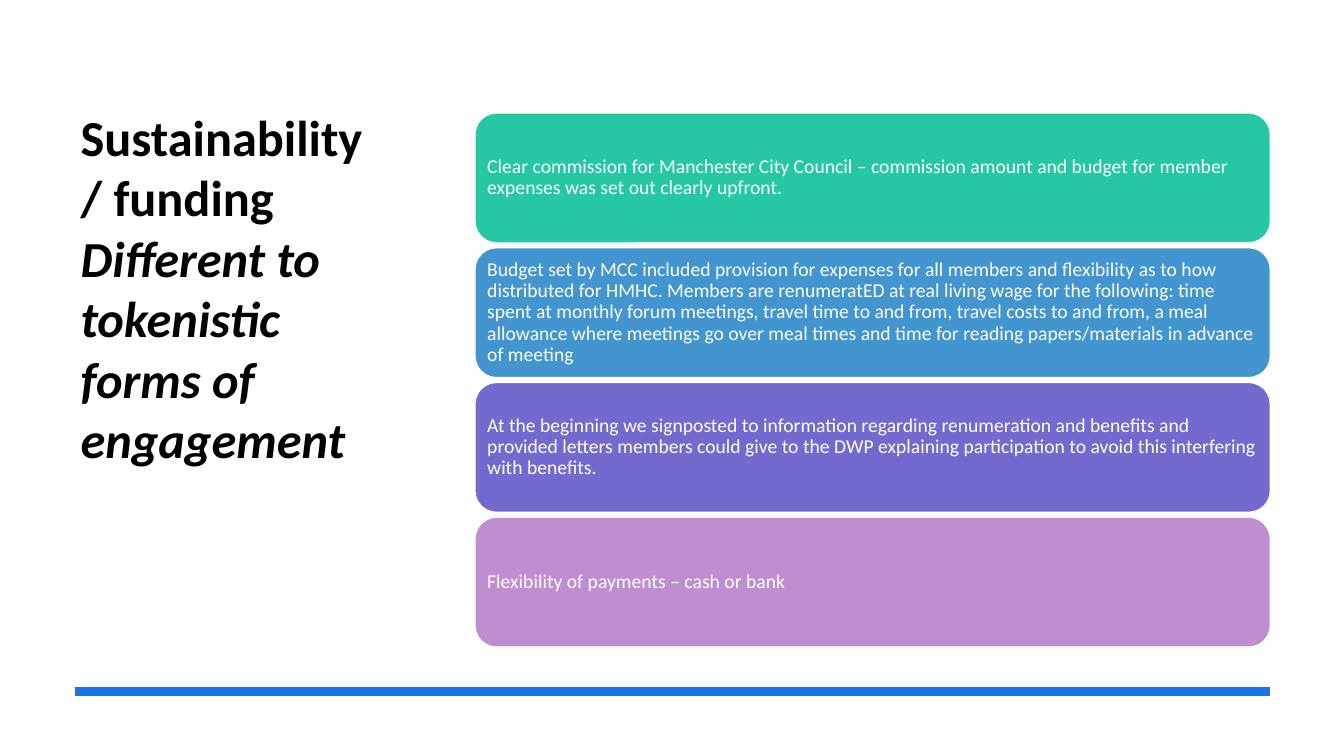
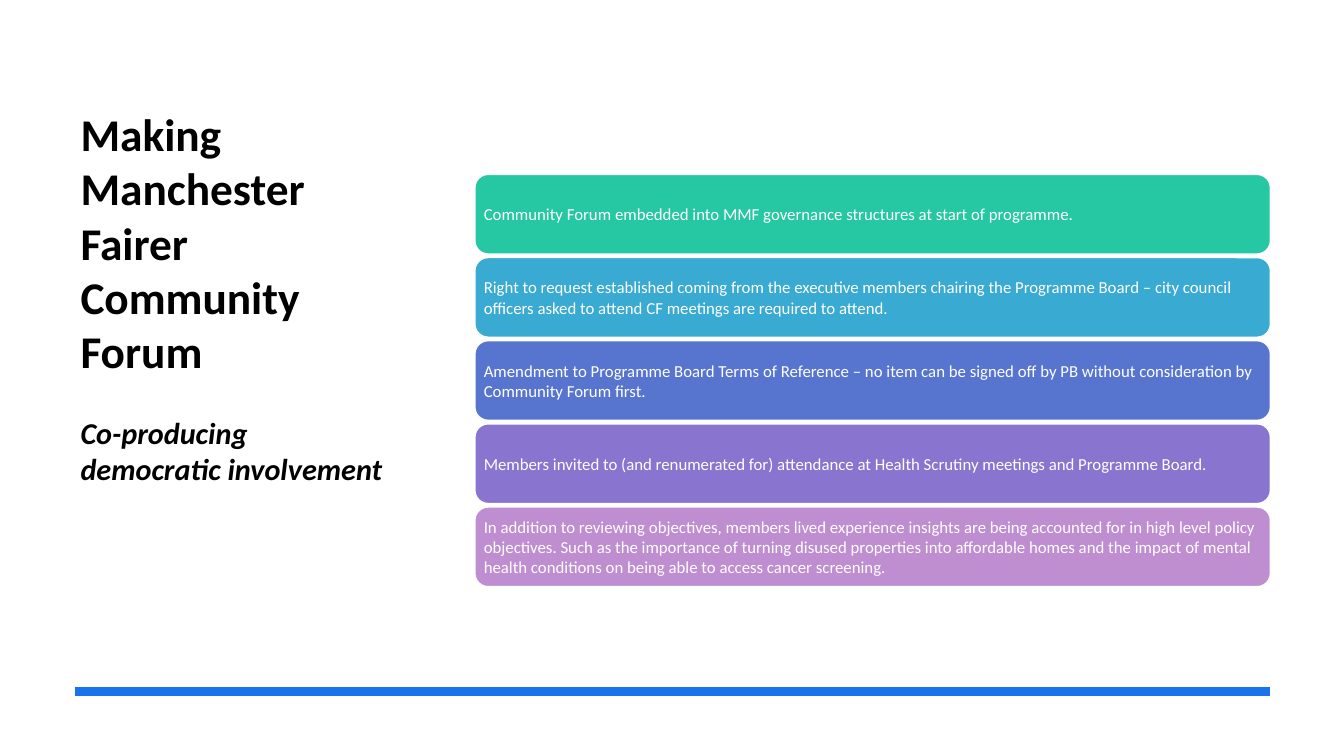
from lxml import etree
from pptx import Presentation
from pptx.dml.color import RGBColor
from pptx.enum.shapes import MSO_CONNECTOR, MSO_SHAPE
from pptx.enum.text import MSO_ANCHOR, PP_ALIGN
from pptx.oxml.ns import qn
from pptx.util import Inches, Pt

FONT = "Calibri"
BLACK = RGBColor(0x00, 0x00, 0x00)
WHITE = RGBColor(0xFF, 0xFF, 0xFF)
RULE_BLUE = RGBColor(0x19, 0x73, 0xEB)
GREEN = RGBColor(0x25, 0xC8, 0xA2)
CYAN = RGBColor(0x39, 0xAA, 0xD1)
SKY = RGBColor(0x43, 0x95, 0xD0)
INDIGO = RGBColor(0x57, 0x75, 0xCF)
VIOLET = RGBColor(0x72, 0x6A, 0xCF)
PURPLE = RGBColor(0x89, 0x74, 0xCF)
LILAC = RGBColor(0xBF, 0x8E, 0xD1)

CARD_LEFT, CARD_WIDTH = 4.71, 7.89

# Content: title and subtitle, then the stack of coloured cards
SLIDES = [
    {
        "title": "Sustainability / funding", "title_size": 36,
        "subtitle": "Different to tokenistic forms of engagement",
        "subtitle_size": 36, "subtitle_gap": 0,
        "first_top": 1.12, "last_top": 5.13, "height": 1.29,
        "inset": 0.06, "size": 14, "spacing": 0.9,
        "cards": [
            (GREEN, "Clear commission for Manchester City Council – commission "
                    "amount and budget for member expenses was set out clearly "
                    "upfront."),
            (SKY, "Budget set by MCC included provision for expenses for all "
                  "members and flexibility as to how distributed for HMHC. "
                  "Members are renumeratED at real living wage for the "
                  "following: time spent at monthly forum meetings, travel time "
                  "to and from, travel costs to and from, a meal allowance where "
                  "meetings go over meal times and time for reading "
                  "papers/materials in advance of meeting"),
            (VIOLET, "At the beginning we signposted to information regarding "
                     "renumeration and benefits and provided letters members "
                     "could give to the DWP explaining participation to avoid "
                     "this interfering with benefits."),
            (LILAC, "Flexibility of payments – cash or bank"),
        ],
    },
    {
        "title": "Making Manchester Fairer Community Forum", "title_size": 32.4,
        "subtitle": "Co-producing democratic involvement",
        "subtitle_size": 21.6, "subtitle_gap": 26,
        "first_top": 1.73, "last_top": 5.03, "height": 0.79,
        "inset": 0.05, "size": 12, "spacing": 1.0,
        "cards": [
            (GREEN, "Community Forum embedded into MMF governance structures at "
                    "start of programme."),
            (CYAN, "Right to request established coming from the executive "
                   "members chairing the Programme Board – city council officers "
                   "asked to attend CF meetings are required to attend."),
            (INDIGO, "Amendment to Programme Board Terms of Reference – no item "
                     "can be signed off by PB without consideration by Community "
                     "Forum first."),
            (PURPLE, "Members invited to (and renumerated for) attendance at "
                     "Health Scrutiny meetings and Programme Board."),
            (LILAC, "In addition to reviewing objectives, members lived "
                    "experience insights are being accounted for in high level "
                    "policy objectives. Such as the importance of turning "
                    "disused properties into affordable homes and the impact of "
                    "mental health conditions on being able to access cancer "
                    "screening."),
        ],
    },
]


def add_run(paragraph, text, size, color, bold=False, italic=False):
    run = paragraph.add_run()
    run.text = text
    run.font.name = FONT
    run.font.size = Pt(size)
    run.font.color.rgb = color
    run.font.bold = bold
    run.font.italic = italic


prs = Presentation()
prs.slide_width = Inches(13.33)
prs.slide_height = Inches(7.5)

for content in SLIDES:
    slide = prs.slides.add_slide(prs.slide_layouts[6])

    # Title with italic subtitle
    heading = slide.shapes.add_textbox(
        Inches(0.7), Inches(1), Inches(3.28), Inches(4.55)).text_frame
    heading.word_wrap = True
    add_run(heading.paragraphs[0], content["title"], content["title_size"],
            BLACK, bold=True)
    subtitle = heading.add_paragraph()
    if content["subtitle_gap"]:
        subtitle.space_before = Pt(content["subtitle_gap"])
    add_run(subtitle, content["subtitle"], content["subtitle_size"],
            BLACK, bold=True, italic=True)

    # Rule at the foot
    rule = slide.shapes.add_connector(
        MSO_CONNECTOR.STRAIGHT,
        Inches(0.74), Inches(6.86), Inches(12.6), Inches(6.86))
    rule.line.color.rgb = RULE_BLUE
    rule.line.width = Pt(6)
    etree.SubElement(rule.element.spPr, qn("a:effectLst"))

    # Stack of cards, evenly spaced from first to last
    cards = content["cards"]
    pitch = (content["last_top"] - content["first_top"]) / (len(cards) - 1)
    for index, (color, text) in enumerate(cards):
        card = slide.shapes.add_shape(
            MSO_SHAPE.ROUNDED_RECTANGLE,
            Inches(CARD_LEFT), Inches(content["first_top"] + index * pitch),
            Inches(CARD_WIDTH), Inches(content["height"]))
        card.shadow.inherit = False
        card.fill.solid()
        card.fill.fore_color.rgb = color
        card.line.color.rgb = WHITE
        card.line.width = Pt(1)

        body = card.text_frame
        body.word_wrap = True
        body.vertical_anchor = MSO_ANCHOR.MIDDLE
        body.margin_left = body.margin_right = Inches(content["inset"])
        body.margin_top = body.margin_bottom = Inches(content["inset"])
        statement = body.paragraphs[0]
        statement.alignment = PP_ALIGN.LEFT
        statement.line_spacing = content["spacing"]
        add_run(statement, text, content["size"], WHITE)

prs.save("out.pptx")
